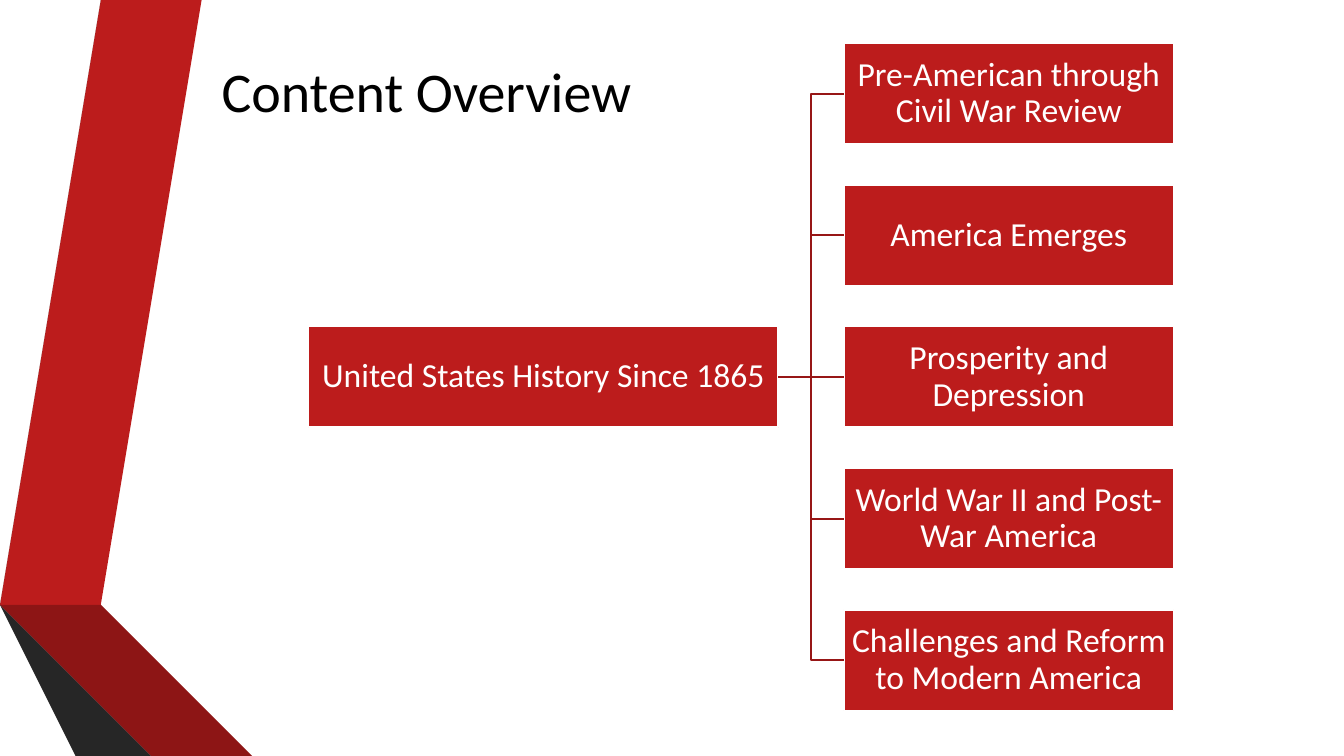
from lxml import etree
from pptx import Presentation
from pptx.dml.color import RGBColor
from pptx.enum.shapes import MSO_CONNECTOR, MSO_SHAPE
from pptx.enum.text import MSO_ANCHOR, PP_ALIGN
from pptx.oxml.ns import qn
from pptx.util import Inches, Pt

RECTANGLE = MSO_SHAPE.RECTANGLE
STRAIGHT, ELBOW = MSO_CONNECTOR.STRAIGHT, MSO_CONNECTOR.ELBOW
MIDDLE, CENTER = MSO_ANCHOR.MIDDLE, PP_ALIGN.CENTER
LEFT_SITE, RIGHT_SITE = 1, 3

COLORS = {
    "red": "BC1C1C",
    "dark red": "8D1515",
    "deep red": "5E0E0E",
    "line red": "971616",
    "gray": "595959",
    "dark gray": "404040",
    "deep gray": "262626",
    "white": "FFFFFF",
    "black": "000000",
}


def color(name):
    return RGBColor.from_string(COLORS[name])


def write_text(shape, text, size, ink, spacing=1.0, margin=0.1):
    frame = shape.text_frame
    frame.word_wrap = True
    frame.vertical_anchor = MIDDLE
    frame.margin_left = frame.margin_right = Inches(margin)
    frame.margin_top = frame.margin_bottom = Inches(min(margin, 0.05))
    para = frame.paragraphs[0]
    para.alignment = CENTER
    para.line_spacing = spacing
    span = para.add_run()
    span.text = text
    span.font.name = "Calibri"
    span.font.size = Pt(size)
    span.font.color.rgb = color(ink)


deck = Presentation()
deck.slide_width = Inches(13.33)
deck.slide_height = Inches(7.5)
page = deck.slides.add_slide(deck.slide_layouts[5])
page.background.fill.solid()
page.background.fill.fore_color.rgb = color("white")

ribbons = [
    ("red", [(0.5, 5.78), (0.77, 5.83), (1.73, 0), (1.45, 0)]),
    ("gray", [(1.39, 0), (1.11, 0), (0.16, 5.73), (0.44, 5.77)]),
    ("deep gray", [(0.16, 5.73), (1.45, 7.5), (1.51, 7.5)]),
    ("deep red", [(0.5, 5.79), (2.08, 7.5), (2.14, 7.5)]),
    ("dark red", [(0.5, 5.79), (2.14, 7.5), (2.83, 7.5), (0.77, 5.83), (0.5, 5.78)]),
    ("dark gray", [(2.02, 7.5), (0.48, 5.83), (0.44, 5.77), (0.16, 5.73), (1.51, 7.5)]),
]
for fill, points in ribbons:
    builder = page.shapes.build_freeform(*points[0], scale=Inches(1))
    builder.add_line_segments(points[1:], close=True)
    ribbon = builder.convert_to_shape()
    ribbon.shadow.inherit = False
    ribbon.fill.solid()
    ribbon.fill.fore_color.rgb = color(fill)
    ribbon.line.fill.background()

title = page.shapes.title
title.left, title.top = Inches(1.87), Inches(0.43)
title.width, title.height = Inches(4.72), Inches(0.93)
write_text(title, "Content Overview", size=40, ink="black")

units = [
    "Pre-American through Civil War Review",
    "America Emerges",
    "Prosperity and Depression",
    "World War II and Post-War America",
    "Challenges and Reform to Modern America",
]
first_top, step = 0.43, 1.405
middle = len(units) // 2
entries = [("United States History Since 1865", 3.06, first_top + middle * step, 4.66)]
entries += [(unit, 8.37, first_top + index * step, 3.27) for index, unit in enumerate(units)]

boxes = []
for text, left, top, width in entries:
    box = page.shapes.add_shape(RECTANGLE, Inches(left), Inches(top), Inches(width), Inches(1))
    box.shadow.inherit = False
    box.fill.solid()
    box.fill.fore_color.rgb = color("red")
    box.line.color.rgb = color("white")
    box.line.width = Pt(1.25)
    write_text(box, text, size=24, ink="white", spacing=0.9, margin=0.02)
    boxes.append(box)

course, *unit_boxes = boxes
for index, unit_box in enumerate(unit_boxes):
    kind = STRAIGHT if index == middle else ELBOW
    branch = page.shapes.add_connector(kind, 0, 0, 0, 0)
    branch.begin_connect(course, RIGHT_SITE)
    branch.end_connect(unit_box, LEFT_SITE)
    branch.line.color.rgb = color("line red")
    branch.line.width = Pt(1.25)
    etree.SubElement(branch.element.spPr, qn("a:effectLst"))

deck.save("out.pptx")
